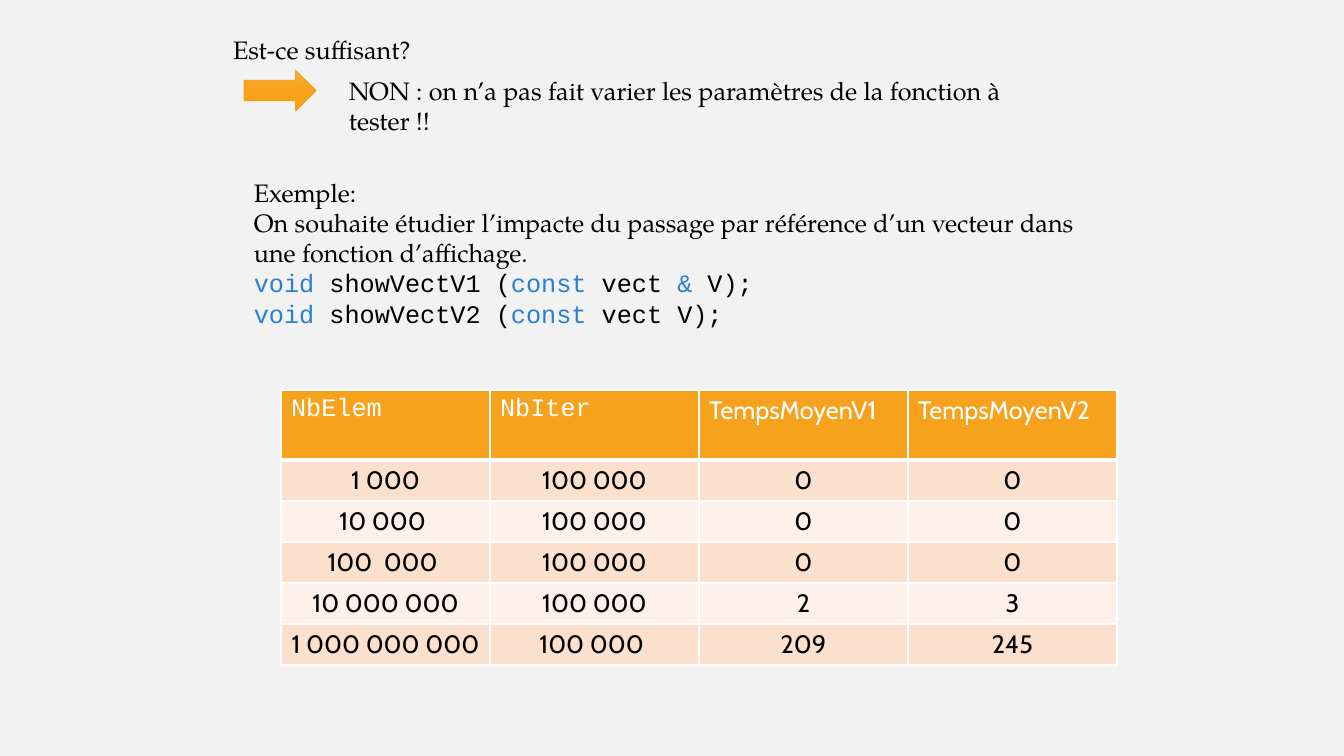
import copy
import dataclasses

import pptx
import pptx.dml.color
import pptx.enum.shapes
import pptx.enum.text
import pptx.oxml
import pptx.oxml.ns
import pptx.util

SHAPE = pptx.enum.shapes.MSO_SHAPE
ALIGN = pptx.enum.text.PP_ALIGN
NONE = pptx.enum.text.MSO_AUTO_SIZE.NONE
TOP = pptx.enum.text.MSO_ANCHOR.TOP


@dataclasses.dataclass(frozen=True)
class Theme:
    back: str = "F2F2F2"
    ink: str = "000000"
    white: str = "FFFFFF"
    blue: str = "297FD5"
    head: str = "F6A21D"
    bands: tuple = ("FBE0CD", "FDF0E8")
    glow: tuple = ("F7A942", "F9A31A", "F99E0F")
    serif: str = "TeX Gyre Pagella"
    code: str = "Courier New"
    sans: str = "Cabin"
    size: int = 18
    thin: int = 1
    thick: int = 3


def px(n):
    return pptx.util.Emu(round(n * 914400 / 100.8))


def rgb(code):
    return pptx.dml.color.RGBColor.from_string(code)


def apply(thing, form):
    for name, value in form.items():
        setattr(thing, name, value)


class Page:
    def __init__(self, deck, theme):
        self.theme = theme
        self.slide = deck.slides.add_slide(deck.slide_layouts[5])
        fill = self.slide.background.fill
        fill.solid()
        fill.fore_color.rgb = rgb(theme.back)

    def line(self, para, runs, align=ALIGN.LEFT):
        """Add runs of (text, font, colour) to a paragraph."""
        para.alignment = align
        for text, face, color in runs:
            run = para.add_run()
            run.text = text
            form = {"name": face, "size": pptx.util.Pt(self.theme.size), "bold": False}
            apply(run.font, form)
            run.font.color.rgb = rgb(color)

    def fit(self, shape, lines):
        frame = shape.text_frame
        apply(frame, {"word_wrap": True, "auto_size": NONE, "vertical_anchor": TOP})
        for i, runs in enumerate(lines):
            self.line(frame.add_paragraph() if i else frame.paragraphs[0], runs)

    def title(self, box, text):
        shape = self.slide.shapes.title
        apply(shape, dict(zip(("left", "top", "width", "height"), map(px, box))))
        self.fit(shape, [[(text, self.theme.serif, self.theme.ink)]])

    def text(self, box, lines):
        self.fit(self.slide.shapes.add_textbox(*map(px, box)), lines)

    def arrow(self, box):
        shape = self.slide.shapes.add_shape(SHAPE.RIGHT_ARROW, *map(px, box))
        shape.shadow.inherit = False
        shape.line.color.rgb = rgb(self.theme.head)
        shape.line.width = pptx.util.Pt(0.5)
        fill = shape.fill
        fill.gradient()
        fill.gradient_angle = 270
        first = next(shape.element.iter(pptx.oxml.ns.qn("a:gs")))
        first.addnext(copy.deepcopy(first))
        for i, (stop, color) in enumerate(zip(fill.gradient_stops, self.theme.glow)):
            stop.position = i / 2
            stop.color.rgb = rgb(color)

    def edge(self, cell, base):
        props = cell._tc.get_or_add_tcPr()
        for side in "LRTB":
            width = pptx.util.Pt(base if side == "B" else self.theme.thin)
            props.append(pptx.oxml.parse_xml(
                f'<a:ln{side} {pptx.oxml.ns.nsdecls("a")} w="{width}"><a:solidFill>'
                f'<a:srgbClr val="{self.theme.white}"/></a:solidFill></a:ln{side}>'))

    def cell(self, cell, run, fill, align, base):
        self.edge(cell, base)
        cell.fill.solid()
        cell.fill.fore_color.rgb = rgb(fill)
        self.line(cell.text_frame.paragraphs[0], [run], align)

    def table(self, left, top, wide, highs, head, rows):
        """Draw a header of (text, font) pairs above banded rows."""
        t = self.theme
        size = (wide * len(head), sum(highs))
        grid = self.slide.shapes.add_table(
            len(highs), len(head), *map(px, (left, top, *size))).table
        for col in grid.columns:
            col.width = px(wide)
        for row, high in zip(grid.rows, highs):
            row.height = px(high)
        for c, (text, face) in enumerate(head):
            self.cell(grid.cell(0, c), (text, face, t.white), t.head, ALIGN.LEFT, t.thick)
        for r, row in enumerate(rows):
            for c, text in enumerate(row):
                self.cell(grid.cell(r + 1, c), (text, t.sans, t.ink),
                          t.bands[r % 2], ALIGN.CENTER, t.thin)


def main():
    deck = pptx.Presentation()
    apply(deck, {"slide_width": px(1344), "slide_height": px(756)})
    t = Theme()
    page = Page(deck, t)

    def say(text):
        return text, t.serif, t.ink

    def code(text):
        return text, t.code, t.ink

    def key(text):
        return text, t.code, t.blue

    page.title((223, 29, 789, 40), "Est-ce suffisant?")
    page.arrow((244, 70, 72, 41))
    page.text((339, 70, 688, 72), [[say(
        "NON : on n’a pas fait varier les paramètres de la fonction à tester !!")]])
    page.text((244, 172, 861, 162), [
        [say("Exemple:")],
        [say("On souhaite étudier l’impacte du passage par référence "
             "d’un vecteur dans une fonction d’affichage.")],
        [key("void "), code("showVectV1 ("), key("const "), code("vect "),
         key("&"), code(" V);")],
        [key("void "), code("showVectV2 ("), key("const "), code("vect V);")],
    ])
    head = [("NbElem", t.code), ("NbIter", t.code),
            ("TempsMoyenV1", t.sans), ("TempsMoyenV2", t.sans)]
    rows = [
        ("1 000", "100 000", "0", "0"),
        ("10 000 ", "100 000", "0", "0"),
        ("100  000 ", "100 000", "0", "0"),
        ("10 000 000", "100 000", "2", "3"),
        ("1 000 000 000", "100 000 ", "209", "245"),
    ]
    page.table(281, 390, 209, [70] + [41] * len(rows), head, rows)
    deck.save("out.pptx")


if __name__ == "__main__":
    main()
